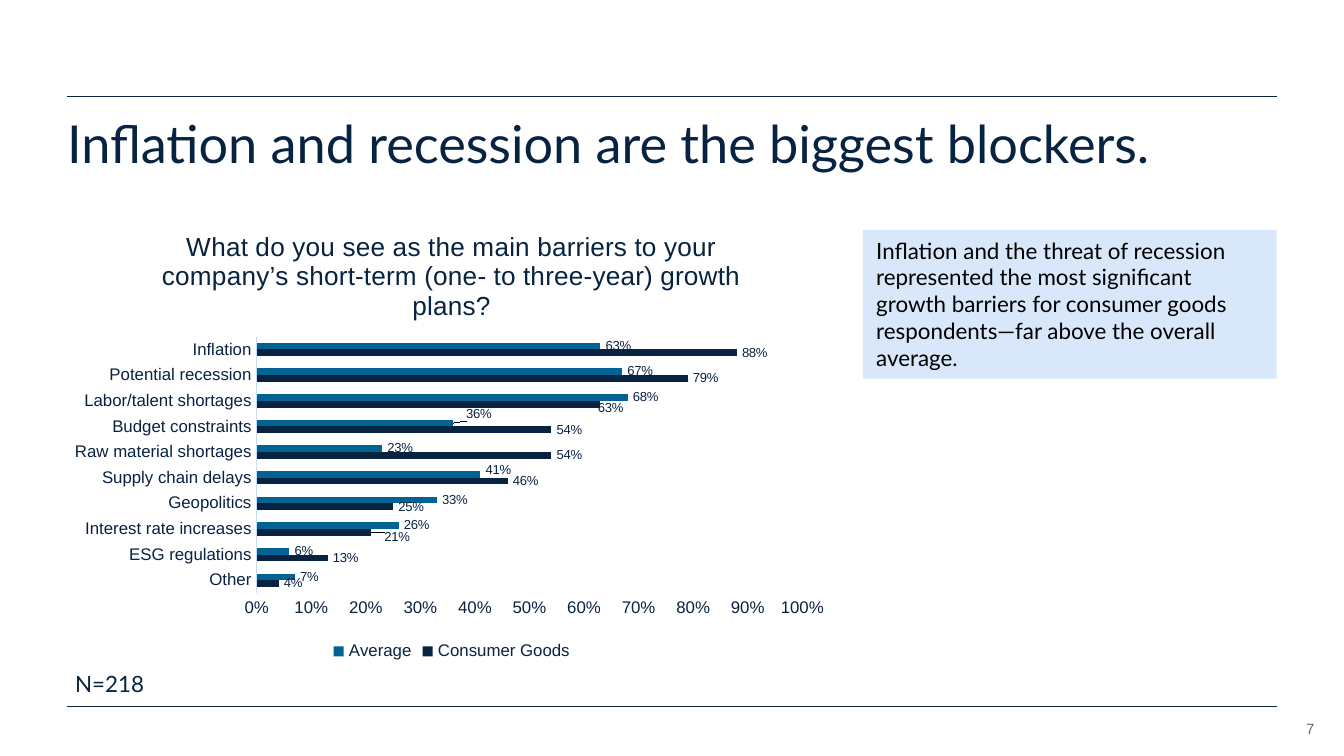
from dataclasses import dataclass

from lxml import etree
from pptx import Presentation
from pptx import util as u
from pptx.chart.data import CategoryChartData
from pptx.dml.color import RGBColor
from pptx.enum import chart as charts
from pptx.enum import shapes, text
from pptx.oxml.ns import qn


@dataclass(frozen=True)
class Theme:
    navy: str = "082241"
    blue: str = "006393"
    pale: str = "D8E8FA"
    axis: str = "C5DCF8"
    black: str = "000000"
    grey: str = "666666"
    body_font: str = "Lato"
    chart_font: str = "Arial"
    title: float = 28
    chart_title: float = 14
    body: float = 12
    chart_text: float = 10
    axis_text: float = 9
    small: float = 8
    label: float = 7
    rule: float = 0.5


def manual_layout(parent, position, **values):
    """Add a c:layout element at the given child position."""
    layout = etree.Element(qn("c:layout"))
    manual = etree.SubElement(layout, qn("c:manualLayout"))
    for name, value in values.items():
        etree.SubElement(manual, qn(f"c:{name}")).set("val", str(value))
    parent.insert(position, layout)


class SlideBuilder:
    def __init__(self, slide, theme):
        self.slide = slide
        self.theme = theme

    def style(self, font, size, color=None, name=None):
        font.size = u.Pt(size)
        font.bold = False
        font.name = name or self.theme.chart_font
        font.color.rgb = RGBColor.from_string(color or self.theme.navy)

    def rule(self, y):
        line = self.slide.shapes.add_connector(
            shapes.MSO_CONNECTOR.STRAIGHT, u.Cm(1.27), u.Cm(y), u.Cm(24.13), u.Cm(y))
        line.line.color.rgb = RGBColor.from_string(self.theme.navy)
        line.line.width = u.Pt(self.theme.rule)
        etree.SubElement(line._element.spPr, qn("a:effectLst"))

    def set_text(self, shape, words, size, color, name, align, inset):
        frame = shape.text_frame
        frame.word_wrap = True
        frame.vertical_anchor = text.MSO_ANCHOR.TOP
        if not inset:
            frame.margin_left = frame.margin_right = 0
            frame.margin_top = frame.margin_bottom = 0
        paragraph = frame.paragraphs[0]
        paragraph.alignment = align
        run = paragraph.add_run()
        run.text = words
        self.style(run.font, size, color, name)
        return paragraph

    def text_box(self, words, box, size, color=None, name=None,
                 align=text.PP_ALIGN.LEFT, inset=True):
        shape = self.slide.shapes.add_textbox(*map(u.Cm, box))
        return self.set_text(shape, words, size, color, name, align, inset)

    def callout(self, words, box):
        shape = self.slide.shapes.add_shape(
            shapes.MSO_SHAPE.RECTANGLE, *map(u.Cm, box))
        shape.shadow.inherit = False
        shape.fill.solid()
        shape.fill.fore_color.rgb = RGBColor.from_string(self.theme.pale)
        shape.line.fill.background()
        self.set_text(shape, words, self.theme.body, self.theme.black,
                      self.theme.body_font, text.PP_ALIGN.LEFT, True)

    def bar_chart(self, title, categories, series, colors, label_shifts, box):
        theme = self.theme
        data = CategoryChartData(number_format="0%")
        data.categories = categories
        for name, values in series.items():
            data.add_series(name, values)
        chart = self.slide.shapes.add_chart(
            charts.XL_CHART_TYPE.BAR_CLUSTERED, *map(u.Cm, box), data).chart
        self.style(chart.font, theme.chart_text)

        # Chart title and legend
        run = chart.chart_title.text_frame.paragraphs[0].add_run()
        run.text = title
        self.style(run.font, theme.chart_title)
        chart.chart_title.include_in_layout = False
        chart.has_legend = True
        chart.legend.position = charts.XL_LEGEND_POSITION.BOTTOM
        chart.legend.include_in_layout = False
        self.style(chart.legend.font, theme.axis_text)

        # Axes
        for axis in (chart.category_axis, chart.value_axis):
            axis.has_major_gridlines = False
            axis.major_tick_mark = axis.minor_tick_mark = charts.XL_TICK_MARK.NONE
            self.style(axis.tick_labels.font, theme.axis_text)
        chart.category_axis.format.line.color.rgb = RGBColor.from_string(theme.axis)
        chart.category_axis.format.line.width = u.Pt(0.75)
        value_axis = chart.value_axis
        value_axis.format.line.fill.background()
        value_axis.minimum_scale, value_axis.maximum_scale = 0, 1
        value_axis.major_unit = 0.1
        value_axis.tick_labels.number_format = "0%"
        value_axis.tick_labels.number_format_is_linked = False

        # Plot area
        plot = chart.plots[0]
        plot.gap_width = 182
        plot.overlap = 0
        plot.vary_by_categories = False
        plot_area = chart._chartSpace.chart.plotArea
        for old in plot_area.findall(qn("c:layout")):
            plot_area.remove(old)
        manual_layout(plot_area, 0, layoutTarget="inner", xMode="edge",
                      yMode="edge", x=0.25, y=0.28, w=0.7, h=0.56)

        # Bars and value labels, some of them nudged clear of their neighbours
        for bars in plot.series:
            bars.format.fill.solid()
            bars.format.fill.fore_color.rgb = RGBColor.from_string(colors[bars.name])
            bars.invert_if_negative = False
            labels = bars.data_labels
            labels.show_value = True
            labels.number_format = "0%"
            labels.number_format_is_linked = False
            labels.position = charts.XL_LABEL_POSITION.OUTSIDE_END
            self.style(labels.font, theme.label)
            shifts = {categories.index(category): shift
                      for category, shift in label_shifts[bars.name].items()}
            for index in shifts:
                label = bars.points[index].data_label
                label.position = charts.XL_LABEL_POSITION.OUTSIDE_END
                self.style(label.font, theme.label)
            for element in labels._element.findall(qn("c:dLbl")):
                x, y = shifts[int(element.find(qn("c:idx")).get("val"))]
                manual_layout(element, 1, x=x, y=y)


def main():
    theme = Theme()
    presentation = Presentation()
    presentation.slide_width = u.Cm(25.4)
    presentation.slide_height = u.Cm(14.29)
    slide = presentation.slides.add_slide(presentation.slide_layouts[6])
    builder = SlideBuilder(slide, theme)

    # Frame: rules and page number
    for y in (1.83, 13.36):
        builder.rule(y)
    builder.text_box("7", (23.65, 13.6, 1.19, 0.36), theme.small, theme.grey,
                     align=text.PP_ALIGN.RIGHT, inset=False)

    # Heading and takeaway
    heading = builder.text_box(
        "Inflation and recession are the biggest blockers.",
        (1.27, 2.24, 22.86, 1.4), theme.title, name=theme.body_font, inset=False)
    heading.line_spacing = 0.9
    builder.callout(
        "Inflation and the threat of recession represented the most significant "
        "growth barriers for consumer goods respondents—far above the overall average.",
        (16.31, 4.35, 7.82, 2.81))

    # Survey chart, categories from bottom to top
    builder.bar_chart(
        "What do you see as the main barriers to your company’s short-term "
        "(one- to three-year) growth plans?",
        ["Other", "ESG regulations", "Interest rate increases", "Geopolitics",
         "Supply chain delays", "Raw material shortages", "Budget constraints",
         "Labor/talent shortages", "Potential recession", "Inflation"],
        {"Consumer Goods": (0.04, 0.13, 0.21, 0.25, 0.46, 0.54, 0.54, 0.63, 0.79, 0.88),
         "Average": (0.07, 0.06, 0.26, 0.33, 0.41, 0.23, 0.36, 0.68, 0.67, 0.63)},
        {"Consumer Goods": theme.navy, "Average": theme.blue},
        {"Consumer Goods": {"Interest rate increases": (0.01, 0.01),
                            "Labor/talent shortages": (-0.01, 0.01)},
         "Average": {"Supply chain delays": (0, -0.01),
                     "Budget constraints": (0.01, -0.02)}},
        (1.17, 3.94, 14.73, 8.66))

    # Sample size
    builder.text_box("N=218", (1.17, 12.55, 3.25, 0.76), theme.body,
                     name=theme.body_font)
    presentation.save("out.pptx")


if __name__ == "__main__":
    main()
